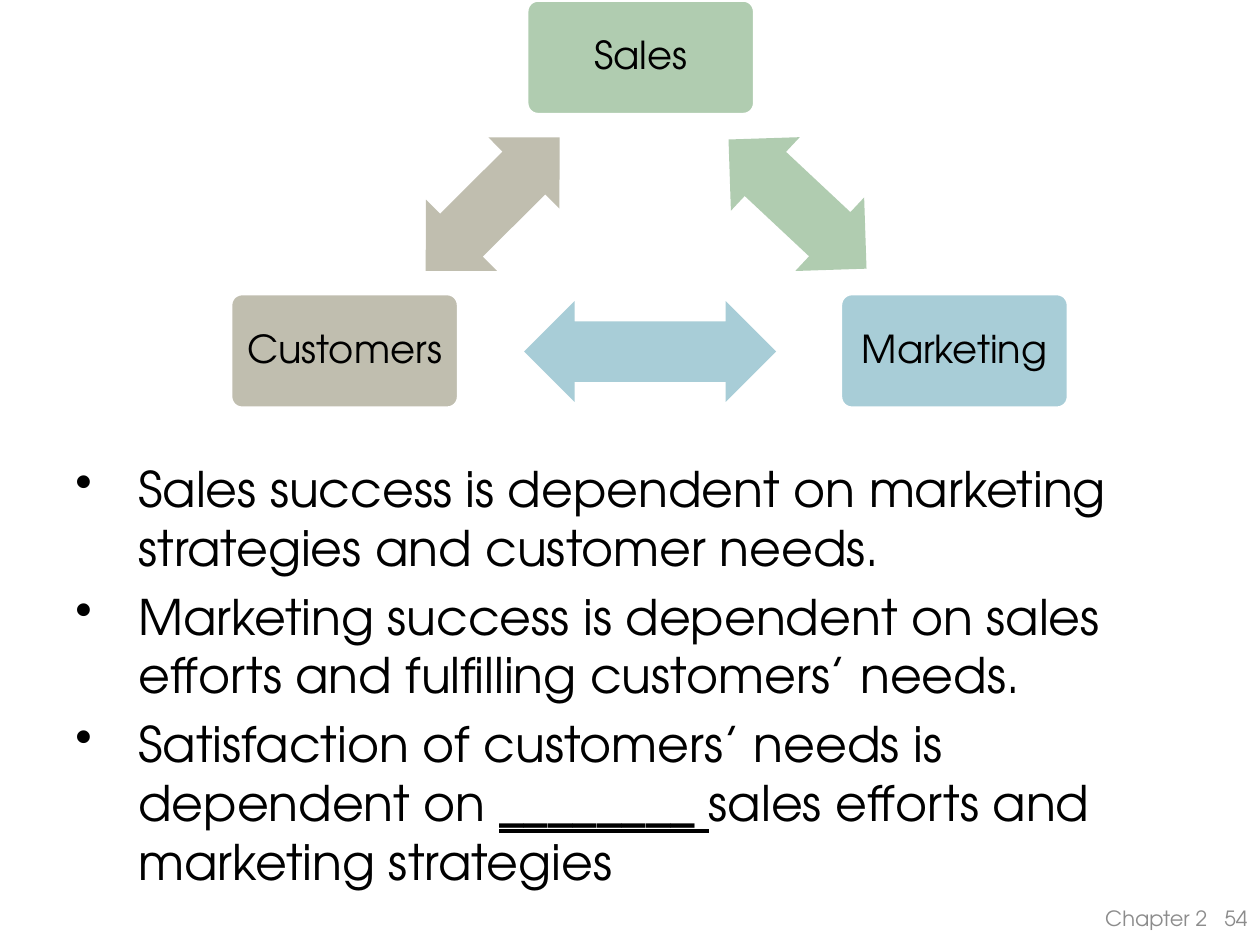
from dataclasses import dataclass

from lxml import etree
from pptx import Presentation
from pptx.dml.color import RGBColor
from pptx.enum.shapes import MSO_SHAPE
from pptx.enum.text import MSO_ANCHOR, PP_ALIGN
from pptx.oxml.ns import qn
from pptx.util import Inches, Pt

BOX = MSO_SHAPE.ROUNDED_RECTANGLE
ARROW = MSO_SHAPE.LEFT_RIGHT_ARROW
TOP, MIDDLE = MSO_ANCHOR.TOP, MSO_ANCHOR.MIDDLE
LEFT, CENTER, RIGHT = PP_ALIGN.LEFT, PP_ALIGN.CENTER, PP_ALIGN.RIGHT


@dataclass(frozen=True)
class Theme:
    font: str = "TeX Gyre Adventor"
    ink: str = "000000"
    gray: str = "8C8C8C"
    white: str = "FFFFFF"
    green: str = "B0CCB0"
    blue: str = "A8CDD7"
    sand: str = "C0BEAF"
    body: int = 28
    label: int = 22
    foot: int = 12


THEME = Theme()

# Label, colour, left, top
NODES = [
    ("Sales", THEME.green, 4.18, 0),
    ("Marketing", THEME.blue, 6.67, 2.33),
    ("Customers", THEME.sand, 1.83, 2.33),
]

# Colour, left, top, width, rotation
LINKS = [
    (THEME.green, 5.58, 1.22, 1.5, 43.1),
    (THEME.blue, 4.16, 2.39, 2, 180),
    (THEME.sand, 3.16, 1.22, 1.5, 315.1),
]

# Each point is a list of (text, marked) runs
POINTS = [
    [("Sales success is dependent on marketing strategies and customer needs.", False)],
    [("Marketing success is dependent on sales efforts and fulfilling customers’ needs.", False)],
    [("Satisfaction of customers’ needs is dependent on ", False),
     ("________ ", True),
     ("sales efforts and marketing strategies", False)],
]


def add_bullet(para, indent):
    props = para._p.get_or_add_pPr()
    props.set("marL", str(Inches(indent)))
    props.set("indent", str(Inches(-indent)))
    etree.SubElement(props, qn("a:buChar")).set("char", "•")


def write(frame, paras, size, color=THEME.ink, align=LEFT, anchor=TOP,
          indent=0, gap=0, lines=1.0):
    """Fill a text frame with paragraphs of (text, marked) runs."""
    frame.word_wrap = True
    frame.vertical_anchor = anchor
    for i, runs in enumerate(paras):
        para = frame.add_paragraph() if i else frame.paragraphs[0]
        para.alignment = align
        para.line_spacing = lines
        if i:
            para.space_before = Pt(gap)
        if indent:
            add_bullet(para, indent)
        for text, marked in runs:
            run = para.add_run()
            run.text = text
            font = run.font
            font.name, font.size = THEME.font, Pt(size)
            font.bold = font.underline = marked
            font.color.rgb = RGBColor.from_string(color)


def add_text(slide, x, y, w, h, paras, size, **style):
    box = slide.shapes.add_textbox(Inches(x), Inches(y), Inches(w), Inches(h))
    write(box.text_frame, paras, size, **style)


def add_form(slide, kind, x, y, w, h, fill):
    form = slide.shapes.add_shape(kind, Inches(x), Inches(y), Inches(w), Inches(h))
    form.shadow.inherit = False
    form.fill.solid()
    form.fill.fore_color.rgb = RGBColor.from_string(fill)
    form.line.fill.background()
    return form


def add_node(slide, label, fill, x, y):
    node = add_form(slide, BOX, x, y, 1.81, 0.91, fill)
    node.adjustments[0] = 0.1
    node.line.color.rgb = RGBColor.from_string(THEME.white)
    node.line.width = Pt(2)
    frame = node.text_frame
    frame.margin_left = frame.margin_right = Inches(0.09)
    write(frame, [[(label, False)]], THEME.label, align=CENTER,
          anchor=MIDDLE, lines=0.9)


def add_link(slide, fill, x, y, w, turn):
    link = add_form(slide, ARROW, x, y, w, 0.8, fill)
    link.adjustments[0], link.adjustments[1] = 0.6, 0.5
    link.rotation = turn


def main():
    deck = Presentation()
    deck.slide_width, deck.slide_height = Inches(10), Inches(7.5)
    slide = deck.slides.add_slide(deck.slide_layouts[6])

    # Footer: chapter and page
    for text, x, w in [("Chapter 2", 7.58, 2.1), ("54", 9.4, 0.6)]:
        add_text(slide, x, 7.08, w, 0.42, [[(text, False)]], THEME.foot,
                 color=THEME.gray, align=RIGHT, anchor=MIDDLE)

    # Bulleted points
    add_text(slide, 0.5, 3.59, 9, 3.74, POINTS, THEME.body, indent=0.5, gap=5.6)

    # Triangle of boxes and arrows
    for node in NODES:
        add_node(slide, *node)
    for link in LINKS:
        add_link(slide, *link)

    deck.save("out.pptx")


if __name__ == "__main__":
    main()
